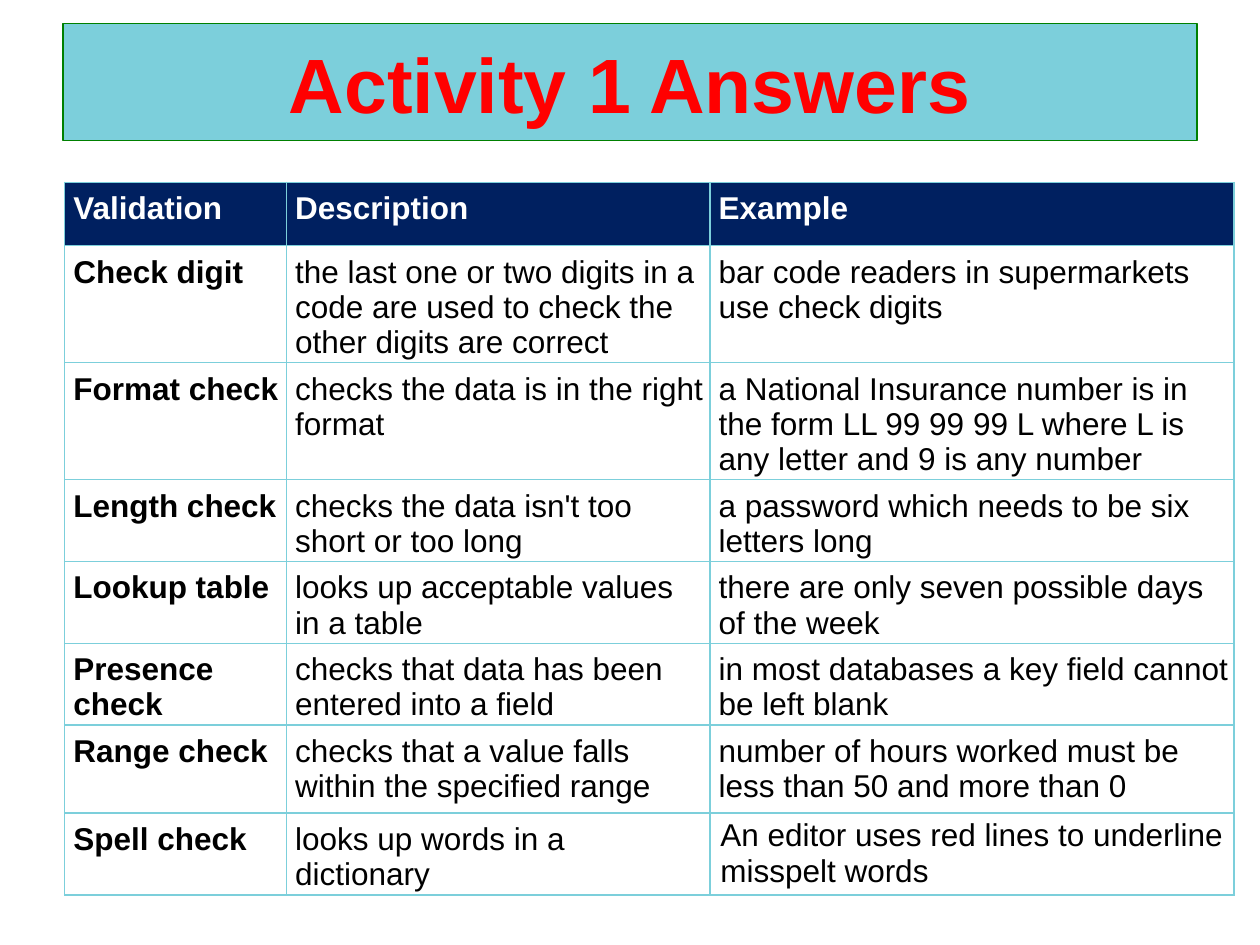
from lxml import etree
from pptx import Presentation
from pptx.dml.color import RGBColor
from pptx.enum import text
from pptx.oxml import ns
from pptx.util import Pt

# Content
TITLE = "Activity 1 Answers"
ROWS = [
    ("Validation", "Description", "Example"),
    ("Check digit",
     "the last one or two digits in a code are used to check the other digits are correct",
     "bar code readers in supermarkets use check digits"),
    ("Format check", "checks the data is in the right format",
     "a National Insurance number is in the form LL 99 99 99 L "
     "where L is any letter and 9 is any number"),
    ("Length check", "checks the data isn't too short or too long",
     "a password which needs to be six letters long"),
    ("Lookup table", "looks up acceptable values in a table",
     "there are only seven possible days of the week"),
    ("Presence check", "checks that data has been entered into a field",
     "in most databases a key field cannot be left blank"),
    ("Range check", "checks that a value falls within the specified range",
     "number of hours worked must be less than 50 and more than 0"),
    ("Spell check", "looks up words in a dictionary",
     "An editor uses red lines to underline misspelt words"),
]


class Theme:
    font = "Arial"
    title_size, body_size = Pt(44), Pt(18)
    red = RGBColor(0xFF, 0x00, 0x00)
    green = RGBColor(0x00, 0x80, 0x00)
    aqua = RGBColor(0x7C, 0xCF, 0xDB)
    navy = RGBColor(0x00, 0x20, 0x60)
    white = RGBColor(0xFF, 0xFF, 0xFF)
    black = RGBColor(0x00, 0x00, 0x00)


# Geometry in points; cell margins are left, top, right, bottom
TITLE_BOX = (36, 13.5, 648, 67)
TABLE_AT = (37, 104.2)
COL_WIDTHS = (126.7, 242, 299.5)
ROW_HEIGHTS = (36.2, 63.4, 60.5, 45.4, 45.4, 45.4, 50.4, 39.6)
MARGINS = (5, 5, 2.6, 1.4)
LAST_MARGINS = (6, 2.9, 6, 2.9)


def style(p, size, color, bold):
    p.font.name = Theme.font
    p.font.size = size
    p.font.bold = bold
    p.font.color.rgb = color


def add_borders(cell, color, width):
    tc_pr = cell._tc.get_or_add_tcPr()
    for side in ("lnL", "lnR", "lnT", "lnB"):
        ln = etree.SubElement(tc_pr, ns.qn(f"a:{side}"), w=str(width))
        fill = etree.SubElement(ln, ns.qn("a:solidFill"))
        etree.SubElement(fill, ns.qn("a:srgbClr"), val=str(color))


def add_title(slide):
    sp = slide.shapes.title
    sp.left, sp.top, sp.width, sp.height = map(Pt, TITLE_BOX)
    sp.fill.solid()
    sp.fill.fore_color.rgb = Theme.aqua
    sp.line.color.rgb = Theme.green
    sp.line.width = Pt(0.75)
    tf = sp.text_frame
    tf.text = TITLE
    tf.vertical_anchor = text.MSO_ANCHOR.MIDDLE
    p = tf.paragraphs[0]
    p.alignment = text.PP_ALIGN.CENTER
    style(p, Theme.title_size, Theme.red, True)


def fill_cell(cell, words, header, bold, margins):
    cell.text = words
    (cell.margin_left, cell.margin_top,
     cell.margin_right, cell.margin_bottom) = map(Pt, margins)
    style(cell.text_frame.paragraphs[0], Theme.body_size,
          Theme.white if header else Theme.black, bold)
    add_borders(cell, Theme.aqua, Pt(1))
    if header:
        cell.fill.solid()
        cell.fill.fore_color.rgb = Theme.navy
    else:
        cell.fill.background()


def add_answers(slide):
    size = (sum(COL_WIDTHS), sum(ROW_HEIGHTS))
    table = slide.shapes.add_table(len(ROWS), len(COL_WIDTHS),
                                   *map(Pt, TABLE_AT + size)).table
    table.horz_banding = False
    for col, width in zip(table.columns, COL_WIDTHS):
        col.width = Pt(width)
    for row, height in zip(table.rows, ROW_HEIGHTS):
        row.height = Pt(height)
    last = (len(ROWS) - 1, len(COL_WIDTHS) - 1)
    for r, row in enumerate(ROWS):
        for c, words in enumerate(row):
            fill_cell(table.cell(r, c), words, r == 0, r == 0 or c == 0,
                      LAST_MARGINS if (r, c) == last else MARGINS)


def main():
    prs = Presentation()
    prs.slide_width, prs.slide_height = Pt(720), Pt(540)
    slide = prs.slides.add_slide(prs.slide_layouts[5])
    add_title(slide)
    add_answers(slide)
    prs.save("out.pptx")


if __name__ == "__main__":
    main()
